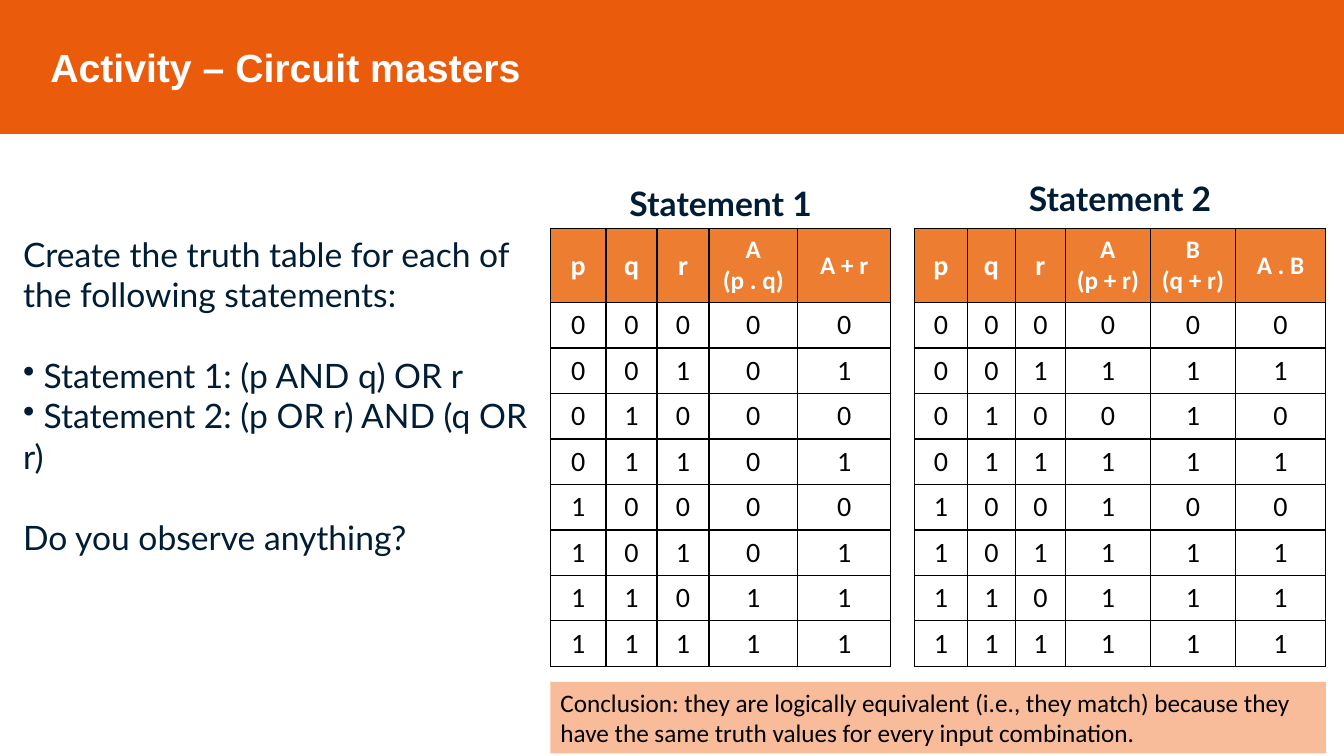
import dataclasses
import itertools
from typing import Callable

import lxml.etree
import pptx
import pptx.dml.color
import pptx.enum.shapes
import pptx.enum.text
import pptx.oxml.ns
import pptx.util

ORANGE, HEADER_ORANGE, PEACH = "EA5B0C", "ED7D31", "F9BC9A"
NAVY, BLACK, WHITE = "001D35", "000000", "FFFFFF"
CENTER = pptx.enum.text.PP_ALIGN.CENTER
MIDDLE = pptx.enum.text.MSO_ANCHOR.MIDDLE
WIDTH, HEIGHT = pptx.util.Inches(13.33), pptx.util.Inches(7.5)

# Shares in percent of the slide's size
TABLE_TOP, HEADER_ROW, VALUE_ROW = 30.27, 9.75, 6.02


@dataclasses.dataclass
class Area:
    left: float
    top: float
    width: float
    height: float

    def lengths(self) -> tuple[int, int, int, int]:
        return across(self.left), down(self.top), across(self.width), down(self.height)


@dataclasses.dataclass
class Style:
    font: str
    size: int
    color: str
    bold: bool = False


@dataclasses.dataclass
class Line:
    text: str
    bulleted: bool = False
    gap_before: int = 0


@dataclasses.dataclass
class Statement:
    heading: str
    heading_top: float
    left: float
    columns: list[float]
    labels: list[str]
    results: Callable[[int, int, int], list[int]]


def across(percent: float) -> int:
    return round(WIDTH * percent / 100)


def down(percent: float) -> int:
    return round(HEIGHT * percent / 100)


def rgb(value: str) -> pptx.dml.color.RGBColor:
    return pptx.dml.color.RGBColor.from_string(value)


def write(frame, lines: list[Line], style: Style, align=None) -> None:
    frame.word_wrap = True
    for index, line in enumerate(lines):
        paragraph = frame.add_paragraph() if index else frame.paragraphs[0]
        paragraph.text = line.text
        paragraph.alignment = align or pptx.enum.text.PP_ALIGN.LEFT
        paragraph.space_before = pptx.util.Pt(line.gap_before)
        font = paragraph.font
        font.name, font.size, font.bold = style.font, pptx.util.Pt(style.size), style.bold
        font.color.rgb = rgb(style.color)
        if line.bulleted:
            bullet = lxml.etree.SubElement(
                paragraph._p.get_or_add_pPr(), pptx.oxml.ns.qn("a:buChar"))
            bullet.set("char", "•")


def add_text(slide, area: Area, lines: list[Line], style: Style, align=None) -> None:
    write(slide.shapes.add_textbox(*area.lengths()).text_frame, lines, style, align)


def add_band(slide, area: Area, fill: str, text: str, style: Style):
    band = slide.shapes.add_shape(
        pptx.enum.shapes.MSO_SHAPE.RECTANGLE, *area.lengths())
    band.shadow.inherit = False
    band.fill.solid()
    band.fill.fore_color.rgb = rgb(fill)
    band.line.fill.background()
    write(band.text_frame, [Line(text)], style)
    return band


def add_borders(cell) -> None:
    properties = cell._tc.get_or_add_tcPr()
    for side in ("lnL", "lnR", "lnT", "lnB"):
        border = lxml.etree.SubElement(
            properties, pptx.oxml.ns.qn(f"a:{side}"), w=str(pptx.util.Pt(1)))
        fill = lxml.etree.SubElement(border, pptx.oxml.ns.qn("a:solidFill"))
        lxml.etree.SubElement(fill, pptx.oxml.ns.qn("a:srgbClr"), val=BLACK)


def fill_cell(cell, text: str, fill: str, style: Style) -> None:
    add_borders(cell)
    cell.fill.solid()
    cell.fill.fore_color.rgb = rgb(fill)
    cell.vertical_anchor = MIDDLE
    write(cell.text_frame, [Line(part) for part in text.split("\n")], style, CENTER)


def add_truth_table(slide, statement: Statement) -> None:
    inputs = list(itertools.product((0, 1), repeat=3))
    area = Area(statement.left, TABLE_TOP, sum(statement.columns),
                HEADER_ROW + len(inputs) * VALUE_ROW)
    table = slide.shapes.add_table(
        len(inputs) + 1, len(statement.columns), *area.lengths()).table
    for column, share in zip(table.columns, statement.columns):
        column.width = across(share)
    for index, row in enumerate(table.rows):
        row.height = down(VALUE_ROW if index else HEADER_ROW)
    for column, label in enumerate(statement.labels):
        size = 20 if len(label) == 1 else 18
        fill_cell(table.cell(0, column), label, HEADER_ORANGE,
                  Style("Calibri", size, WHITE, True))
    for row, values in enumerate(inputs, start=1):
        for column, value in enumerate([*values, *statement.results(*values)]):
            fill_cell(table.cell(row, column), str(value), WHITE,
                      Style("Calibri", 20, BLACK))
    add_text(slide, Area(statement.left, statement.heading_top, area.width, 6.67),
             [Line(statement.heading)], Style("Lato", 24, NAVY, True), CENTER)


STATEMENTS = [
    Statement("Statement 1", 23.6, 40.96, [4.13, 3.8, 3.87, 6.59, 6.93],
              ["p", "q", "r", "A\n(p . q)", "A + r"],
              lambda p, q, r: [p & q, p & q | r]),
    Statement("Statement 2", 22.93, 68.04, [3.94, 3.57, 3.72, 6.33, 6.33, 6.7],
              ["p", "q", "r", "A\n(p + r)", "B\n(q + r)", "A . B"],
              lambda p, q, r: [p | r, q | r, (p | r) & (q | r)]),
]

TASK = [
    Line("Create the truth table for each of the following statements:"),
    Line(" Statement 1: (p AND q) OR r", bulleted=True, gap_before=29),
    Line(" Statement 2: (p OR r) AND (q OR r)", bulleted=True),
    Line("Do you observe anything?", gap_before=29),
]


def main() -> None:
    deck = pptx.Presentation()
    deck.slide_width, deck.slide_height = WIDTH, HEIGHT
    slide = deck.slides.add_slide(deck.slide_layouts[6])

    # Title band
    title = add_band(slide, Area(0, 0, 100, 17.6), ORANGE,
                     "Activity – Circuit masters", Style("Arial", 28, WHITE, True))
    title.line.color.rgb = rgb(ORANGE)
    title.line.width = pptx.util.Pt(1)
    title.text_frame.margin_left = across(3.75)
    title.text_frame.vertical_anchor = MIDDLE

    # Task
    add_text(slide, Area(0.98, TABLE_TOP, 39.16, 39.07), TASK, Style("Lato", 24, NAVY))

    # Truth tables with headings
    for statement in STATEMENTS:
        add_truth_table(slide, statement)

    # Conclusion
    conclusion = add_band(
        slide, Area(40.96, 90.2, 57.69, 9.47), PEACH,
        "Conclusion: they are logically equivalent (i.e., they match) because they "
        "have the same truth values for every input combination.",
        Style("Calibri", 18, BLACK))
    conclusion.text_frame.vertical_anchor = pptx.enum.text.MSO_ANCHOR.TOP

    deck.save("out.pptx")


if __name__ == "__main__":
    main()
